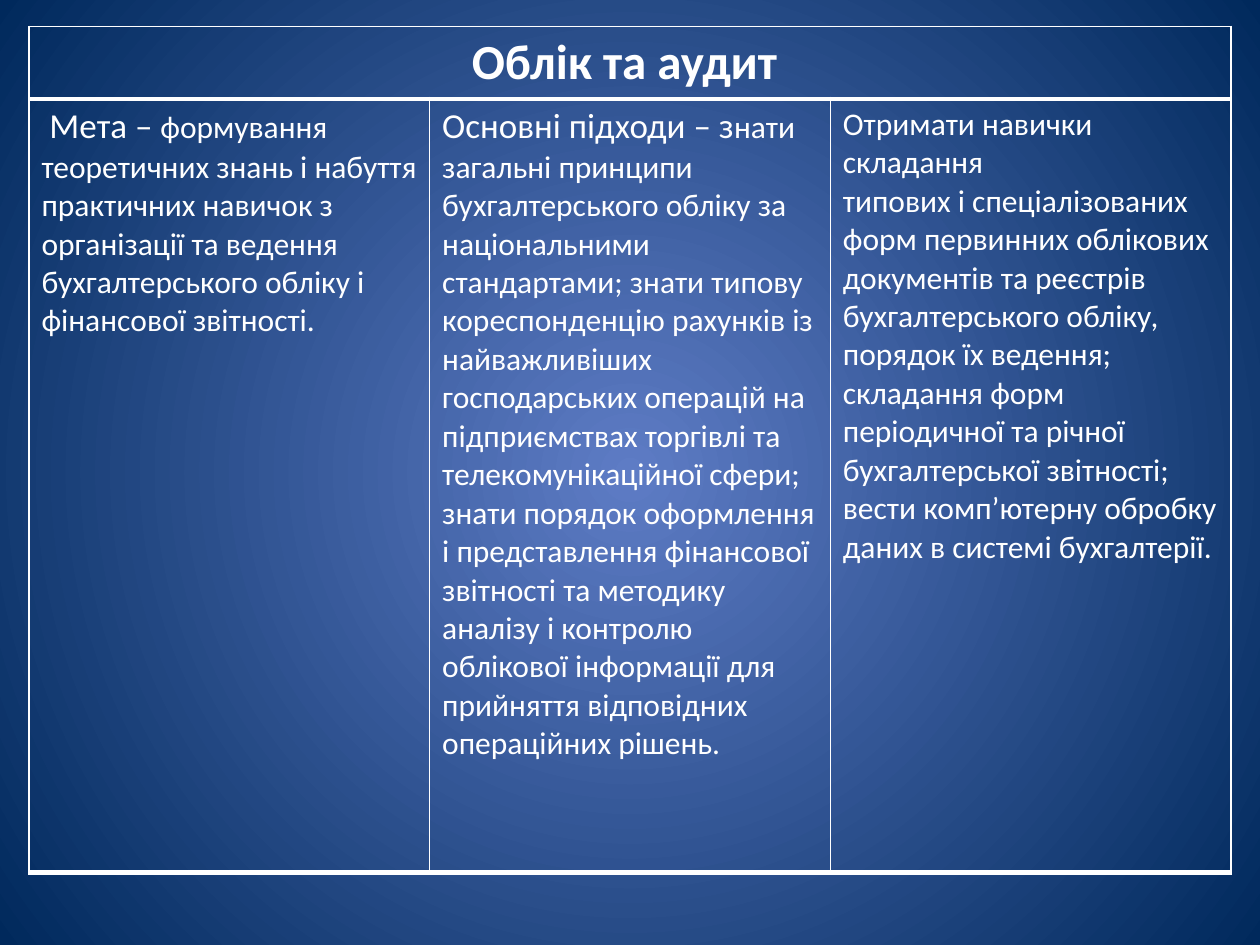
"""Build a slide with a three-column table about an accounting and audit course."""
from dataclasses import dataclass

from lxml.etree import SubElement
from pptx import Presentation
from pptx.dml.color import RGBColor
from pptx.enum.text import PP_ALIGN
from pptx.oxml.ns import qn
from pptx.util import Inches, Pt


@dataclass(frozen=True)
class Theme:
    font: str = "Calibri"
    text: str = "FFFFFF"
    center: str = "5E7CC5"
    edge: str = "00295C"
    title_size: int = 28
    lead_size: int = 20
    body_size: int = 18
    thin: int = 1
    thick: int = 3


theme = Theme()


def add_runs(paragraph, runs, bold=False):
    for text, size in runs:
        run = paragraph.add_run()
        run.text = text
        run.font.name = theme.font
        run.font.size = Pt(size)
        run.font.bold = bold
        run.font.color.rgb = RGBColor.from_string(theme.text)


def style_cell(cell, top, bottom):
    properties = cell._tc.get_or_add_tcPr()
    widths = {"L": theme.thin, "R": theme.thin, "T": top, "B": bottom}
    for side, width in widths.items():
        line = SubElement(properties, qn(f"a:ln{side}"), w=str(Pt(width)))
        fill = SubElement(line, qn("a:solidFill"))
        SubElement(fill, qn("a:srgbClr"), val=theme.text)
    cell.fill.background()


title = "Облік та аудит "
columns = [
    [
        [
            (" Мета – ", theme.lead_size),
            ("формування теоретичних знань і набуття практичних навичок з організації "
             "та ведення бухгалтерського обліку і фінансової звітності.", theme.body_size),
        ],
    ],
    [
        [
            ("Основні підходи – з", theme.lead_size),
            ("нати загальні принципи бухгалтерського обліку за національними стандартами; "
             "знати типову кореспонденцію рахунків із найважливіших господарських операцій "
             "на підприємствах торгівлі та телекомунікаційної сфери;", theme.body_size),
        ],
        [
            ("знати порядок оформлення і представлення фінансової звітності та методику "
             "аналізу і контролю облікової інформації для прийняття відповідних "
             "операційних рішень.", theme.body_size),
        ],
    ],
    [
        [("Отримати навички складання", theme.body_size)],
        [
            ("типових і спеціалізованих форм первинних облікових документів та реєстрів "
             "бухгалтерського обліку, порядок їх ведення;", theme.body_size),
        ],
        [("складання форм періодичної та річної бухгалтерської звітності;", theme.body_size)],
        [("вести комп’ютерну обробку даних в системі бухгалтерії.", theme.body_size)],
    ],
]

presentation = Presentation()
presentation.slide_width = Inches(10)
presentation.slide_height = Inches(7.5)
slide = presentation.slides.add_slide(presentation.slide_layouts[6])

background = slide.background.fill
background.gradient()
for stop, color in zip(background.gradient_stops, (theme.center, theme.edge)):
    stop.color.rgb = RGBColor.from_string(color)
gradient = next(slide.element.iter(qn("a:gradFill")))
gradient.remove(gradient.find(qn("a:lin")))
shade = SubElement(gradient, qn("a:path"), path="circle")
SubElement(shade, qn("a:fillToRect"), l="50000", t="50000", r="50000", b="50000")

left = Inches(0.23)
top = Inches(0.21)
width = presentation.slide_width - 2 * left
row_heights = (Inches(0.57), Inches(6.14))
table = slide.shapes.add_table(
    len(row_heights), len(columns), left, top, width, sum(row_heights)
).table
table.first_row = False
table.horz_banding = False
for row, height in zip(table.rows, row_heights):
    row.height = height

header = table.cell(0, 0)
header.merge(table.cell(0, len(columns) - 1))
header_paragraph = header.text_frame.paragraphs[0]
header_paragraph.alignment = PP_ALIGN.CENTER
add_runs(header_paragraph, [(title, theme.title_size)], bold=True)

for index, paragraphs in enumerate(columns):
    style_cell(table.cell(0, index), theme.thin, theme.thick)
    cell = table.cell(1, index)
    style_cell(cell, theme.thick, theme.thick)
    frame = cell.text_frame
    for number, runs in enumerate(paragraphs):
        paragraph = frame.add_paragraph() if number else frame.paragraphs[0]
        add_runs(paragraph, runs)

presentation.save("out.pptx")
